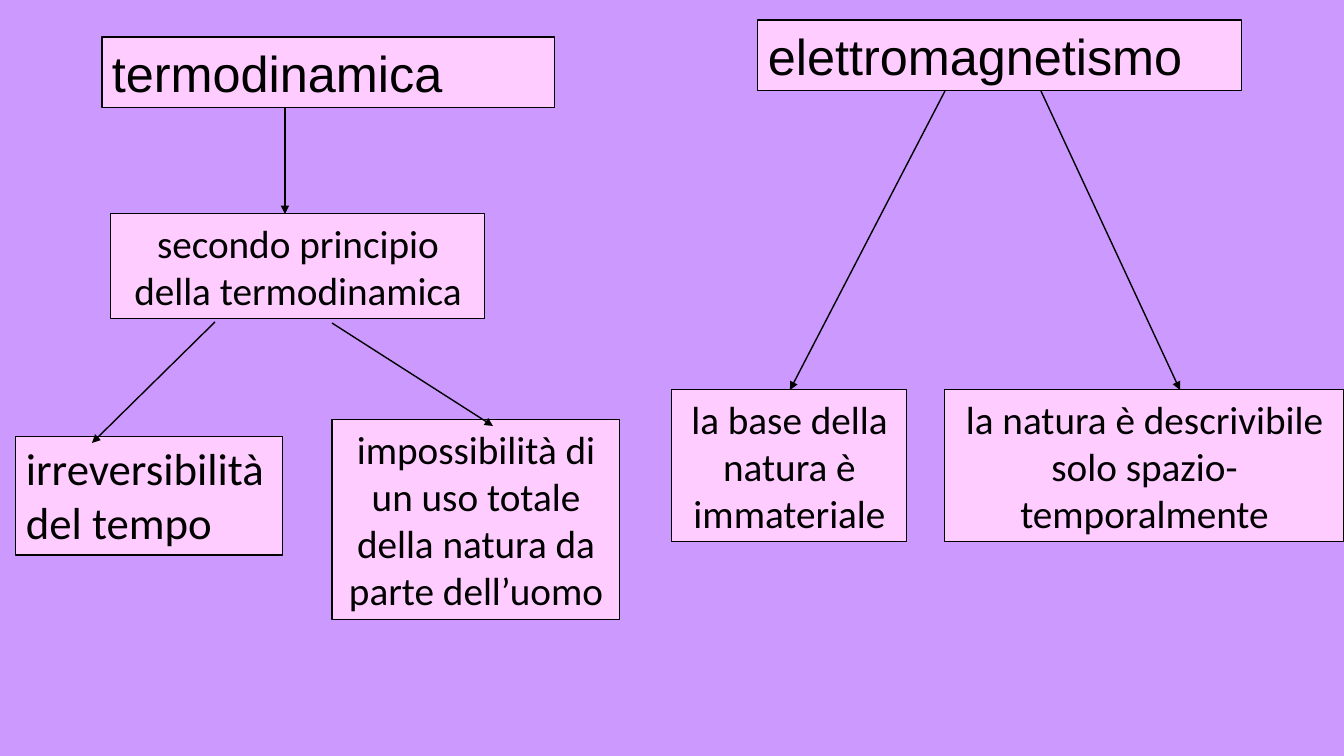
from lxml import etree
from pptx import Presentation
from pptx.dml.color import RGBColor
from pptx.enum.shapes import MSO_CONNECTOR
from pptx.enum.text import MSO_AUTO_SIZE, PP_ALIGN
from pptx.oxml.ns import qn
from pptx.util import Pt

STRAIGHT = MSO_CONNECTOR.STRAIGHT
LEFT, CENTER = PP_ALIGN.LEFT, PP_ALIGN.CENTER
GROW = MSO_AUTO_SIZE.SHAPE_TO_FIT_TEXT

THEME = {
    "background": RGBColor(0xCC, 0x99, 0xFF),
    "box": RGBColor(0xFF, 0xCC, 0xFF),
    "ink": RGBColor(0, 0, 0),
    "border": Pt(0.75),
    "arrow": Pt(1),
    # font, size, alignment
    "heading": ("Arial", Pt(36), LEFT),
    "large": ("Calibri", Pt(32), LEFT),
    "concept": ("Calibri", Pt(28), CENTER),
}
EMU_PER_PX = 914400 / 100.8


def px(*lengths):
    return [round(n * EMU_PER_PX) for n in lengths]


# Slide
prs = Presentation()
prs.slide_width, prs.slide_height = px(1344, 756)
s = prs.slides.add_slide(prs.slide_layouts[6])
s.background.fill.solid()
s.background.fill.fore_color.rgb = THEME["background"]

# Concept boxes: text, style, left, top, width, height
BOXES = [
    ("termodinamica", "heading", 102, 37, 453, 71),
    ("elettromagnetismo", "heading", 758, 20, 484, 71),
    ("secondo principio della termodinamica", "concept", 111, 214, 374, 105),
    ("irreversibilità del tempo", "large", 16, 436, 267, 119),
    ("impossibilità di un uso totale della natura da parte dell’uomo",
     "concept", 332, 420, 288, 200),
    ("la base della natura è immateriale", "concept", 672, 390, 235, 152),
    ("la natura è descrivibile solo spazio-temporalmente",
     "concept", 945, 390, 399, 152),
]
for text, style, *box in BOXES:
    sp = s.shapes.add_textbox(*px(*box))
    sp.fill.solid()
    sp.fill.fore_color.rgb = THEME["box"]
    sp.line.color.rgb = THEME["ink"]
    sp.line.width = THEME["border"]
    tf = sp.text_frame
    tf.word_wrap = True
    tf.auto_size = GROW
    p = tf.paragraphs[0]
    p.text = text
    p.font.name, p.font.size, p.alignment = THEME[style]
    p.font.color.rgb = THEME["ink"]

# Arrows: start x, start y, end x, end y
ARROWS = [
    (285, 108, 285, 214),
    (215, 322, 92, 443),
    (332, 323, 493, 426),
    (945, 91, 790, 390),
    (1041, 91, 1180, 390),
]
for ends in ARROWS:
    cxn = s.shapes.add_connector(STRAIGHT, *px(*ends))
    cxn.line.color.rgb = THEME["ink"]
    cxn.line.width = THEME["arrow"]
    etree.SubElement(cxn.line._get_or_add_ln(), qn("a:tailEnd"), type="triangle")
    etree.SubElement(cxn._element.spPr, qn("a:effectLst"))

prs.save("out.pptx")
